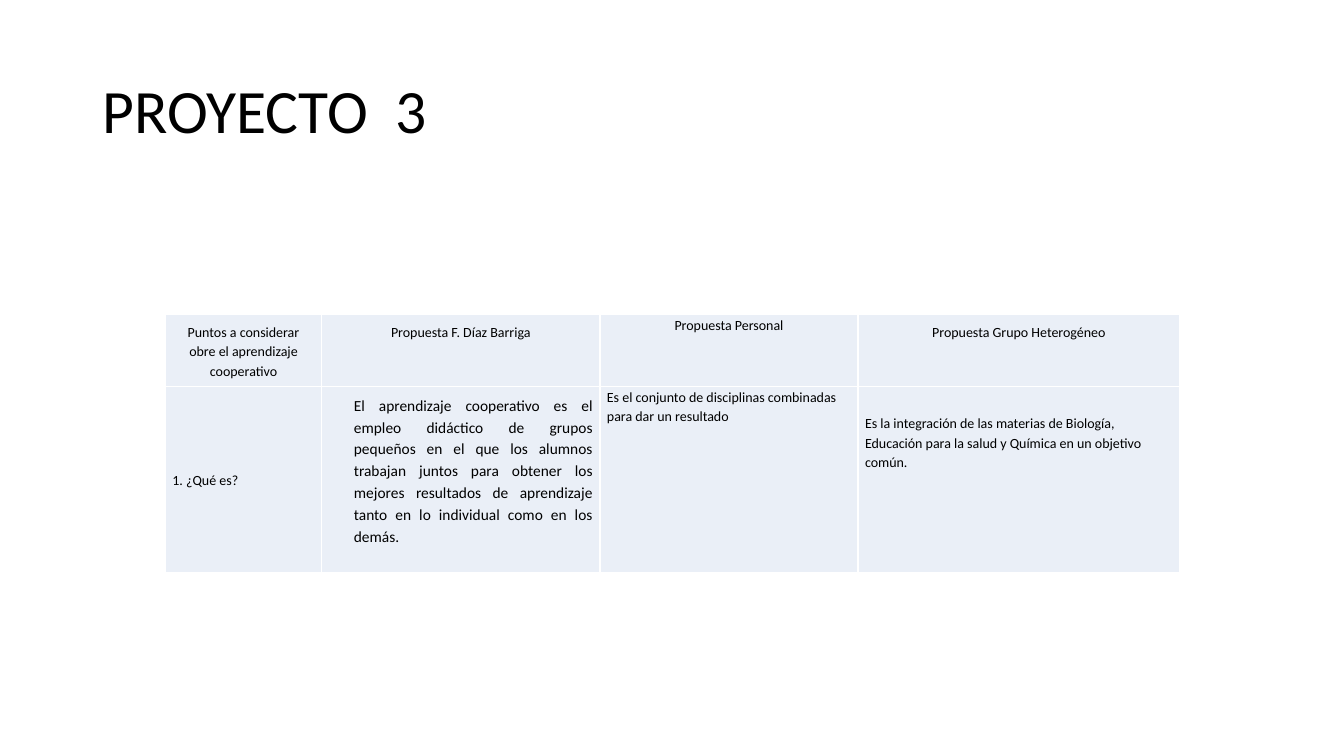
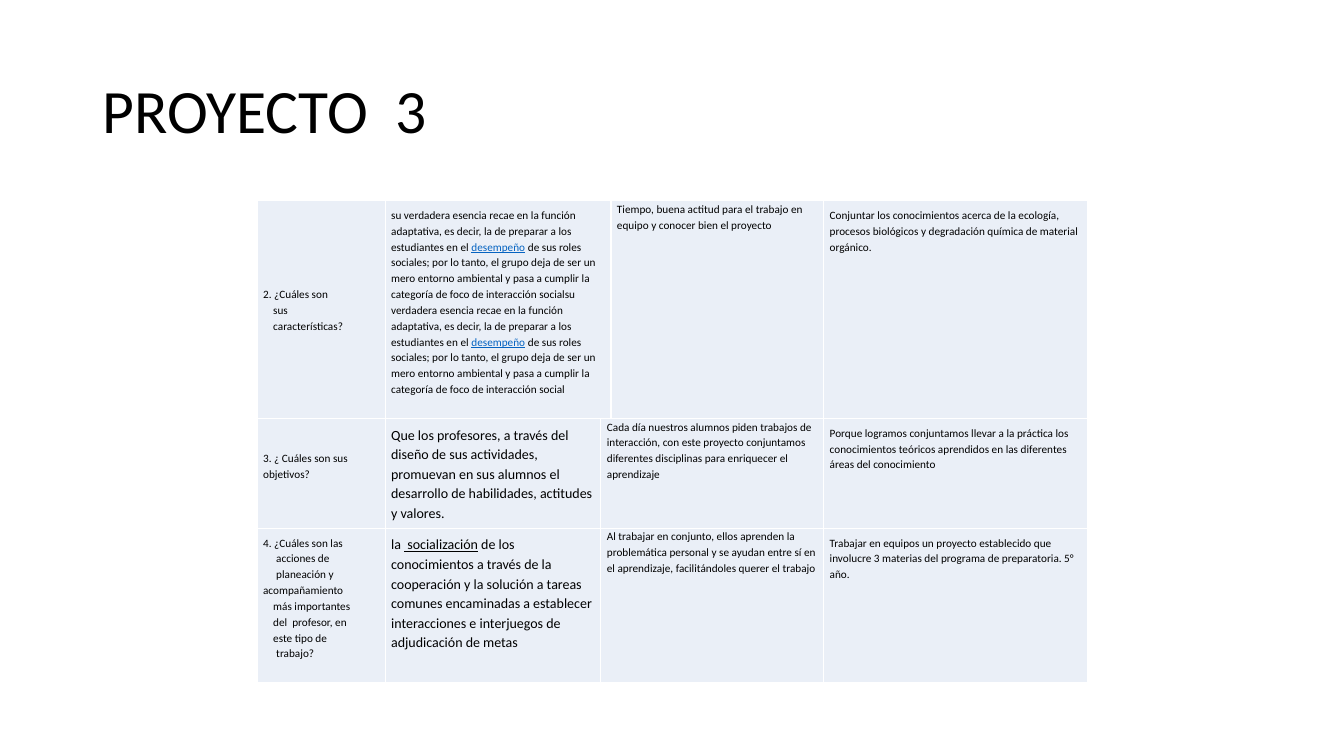
from dataclasses import dataclass
from itertools import zip_longest

from lxml import etree
from pptx import Presentation
from pptx import util as u
from pptx.dml.color import RGBColor
from pptx.enum import text
from pptx.oxml import ns

BLACK = RGBColor(0x00, 0x00, 0x00)
WHITE = RGBColor(0xFF, 0xFF, 0xFF)
LINK_BLUE = RGBColor(0x05, 0x63, 0xC1)
CELL_FILL = RGBColor(0xEA, 0xEF, 0xF7)
FONT = "Calibri"
TITLE = "PROYECTO  3"
CENTER = text.PP_ALIGN.CENTER
JUSTIFY = text.PP_ALIGN.JUSTIFY
MIDDLE = text.MSO_ANCHOR.MIDDLE


@dataclass
class Span:
    text: str
    color: RGBColor = BLACK
    underline: bool = False


@dataclass
class Entry:
    """Content of a cell; each paragraph is a string or a list of spans."""
    paras: list
    size: float
    align: text.PP_ALIGN = text.PP_ALIGN.LEFT
    anchor: text.MSO_ANCHOR = text.MSO_ANCHOR.TOP
    top: float = None
    bottom: float = None
    left_indent: float = 0
    first_indents: tuple = ()


LINK = Span("desempeño", LINK_BLUE, True)
ESSENCE = ("su verdadera esencia recae en la función adaptativa, es decir, la de "
           "preparar a los estudiantes en el ")
ROLES = (" de sus roles sociales; por lo tanto, el grupo deja de ser un mero entorno "
         "ambiental y pasa a cumplir la categoría de foco de interacción social")

DEFINITION_ROWS = [
    [
        Entry(["Puntos a considerar", "obre el aprendizaje cooperativo"], 10, CENTER, MIDDLE),
        Entry(["Propuesta F. Díaz Barriga"], 10, CENTER),
        Entry(["Propuesta Personal"], 10, CENTER, top=0),
        Entry(["Propuesta Grupo Heterogéneo"], 10, CENTER),
    ],
    [
        Entry(["1. ¿Qué es?"], 10, anchor=MIDDLE),
        Entry(["El aprendizaje cooperativo es el empleo didáctico de grupos pequeños en el "
               "que los alumnos trabajan juntos para obtener los mejores resultados de "
               "aprendizaje tanto en lo individual como en los demás."],
              11, JUSTIFY, left_indent=0.25),
        Entry(["Es el conjunto de disciplinas combinadas para dar un resultado"], 10, top=0),
        Entry(["Es la integración de las materias de Biología, Educación para la salud y "
               "Química en un objetivo común."], 10, top=0.26),
    ],
]

# None marks a grid cell covered by the merged cell on its left.
QUESTION_ROWS = [
    [
        Entry(["2. ¿Cuáles son", "sus", "características?"], 8, anchor=MIDDLE,
              first_indents=(0, 0.1, 0.1)),
        Entry([[Span(ESSENCE), LINK, Span(ROLES + ESSENCE), LINK, Span(ROLES)]], 8),
        None,
        Entry(["Tiempo, buena actitud para el trabajo en equipo y conocer bien el proyecto"],
              8, top=0),
        Entry(["Conjuntar los conocimientos acerca de la ecología, procesos biológicos y "
               "degradación química de material orgánico."], 8),
    ],
    [
        Entry(["3. ¿ Cuáles son sus objetivos?"], 8, anchor=MIDDLE, bottom=0.22),
        Entry(["Que los profesores, a través del diseño de sus actividades, promuevan en sus "
               "alumnos el desarrollo de habilidades, actitudes y valores."], 10),
        Entry(["Cada día nuestros alumnos piden trabajos de interacción, con este proyecto "
               "conjuntamos diferentes disciplinas para enriquecer el aprendizaje"], 8, top=0),
        None,
        Entry(["Porque logramos conjuntamos llevar a la práctica los conocimientos teóricos "
               "aprendidos en las diferentes áreas del conocimiento"], 8),
    ],
    [
        Entry(["4. ¿Cuáles son las", "acciones de", "planeación y acompañamiento",
               "más importantes", "del  profesor, en", "este tipo de", "trabajo?"],
              8, anchor=MIDDLE, bottom=0.22,
              first_indents=(0, 0.13, 0.13, 0.1, 0.1, 0.1, 0.13)),
        Entry([[Span("la "), Span(" socialización", underline=True),
                Span(" de los conocimientos a través de la cooperación y la solución a "
                     "tareas comunes encaminadas a establecer interacciones e interjuegos "
                     "de adjudicación de metas")]], 10),
        Entry(["Al trabajar en conjunto, ellos aprenden la problemática personal y se ayudan "
               "entre sí en el aprendizaje, facilitándoles querer el trabajo"], 8, top=0),
        None,
        Entry(["Trabajar en equipos un proyecto establecido que involucre 3 materias del "
               "programa de preparatoria. 5° año."], 8),
    ],
]


def add_run(para, span, size):
    run = para.add_run()
    run.text = span.text
    run.font.name = FONT
    run.font.size = u.Pt(size)
    run.font.color.rgb = span.color
    run.font.underline = span.underline


def add_title(slide):
    box = slide.shapes.add_textbox(u.Inches(0.92), u.Inches(0.4), u.Inches(11.5), u.Inches(1.45))
    frame = box.text_frame
    frame.word_wrap = True
    frame.vertical_anchor = MIDDLE
    para = frame.paragraphs[0]
    para.line_spacing = 0.9
    add_run(para, Span(TITLE), 44)


def style_cell(cell):
    """Give the cell white borders and the pale fill."""
    properties = cell._tc.get_or_add_tcPr()
    for side in ("a:lnL", "a:lnR", "a:lnT", "a:lnB"):
        line = etree.SubElement(properties, ns.qn(side), w=str(u.Pt(1)))
        fill = etree.SubElement(line, ns.qn("a:solidFill"))
        etree.SubElement(fill, ns.qn("a:srgbClr"), val=str(WHITE))
    cell.fill.solid()
    cell.fill.fore_color.rgb = CELL_FILL


def fill_cell(cell, entry, pad):
    cell.vertical_anchor = entry.anchor
    cell.margin_left = cell.margin_right = u.Inches(pad)
    cell.margin_top = u.Inches(pad if entry.top is None else entry.top)
    # Cells that start at the very top have no lower margin either.
    default_bottom = 0 if entry.top == 0 else pad
    cell.margin_bottom = u.Inches(default_bottom if entry.bottom is None else entry.bottom)
    frame = cell.text_frame
    for index, (content, first) in enumerate(
            zip_longest(entry.paras, entry.first_indents, fillvalue=0)):
        para = frame.add_paragraph() if index else frame.paragraphs[0]
        para.alignment = entry.align
        para.line_spacing = 1.15
        properties = para._p.get_or_add_pPr()
        properties.set("marL", str(u.Inches(entry.left_indent)))
        properties.set("indent", str(u.Inches(first)))
        spans = [Span(content)] if isinstance(content, str) else content
        for span in spans:
            add_run(para, span, entry.size)


def add_grid(slide, left, top, widths, heights, rows, pad):
    frame = slide.shapes.add_table(len(heights), len(widths), u.Inches(left), u.Inches(top),
                                   u.Inches(sum(widths)), u.Inches(sum(heights)))
    table = frame.table
    table.first_row = table.horz_banding = False
    for column, width in zip(table.columns, widths):
        column.width = u.Inches(width)
    for row, height in zip(table.rows, heights):
        row.height = u.Inches(height)
    for r, entries in enumerate(rows):
        for c, entry in enumerate(entries):
            cell = table.cell(r, c)
            style_cell(cell)
            if entry is None:
                table.cell(r, c - 1).merge(cell)
            else:
                fill_cell(cell, entry, pad)


def add_project_slide(deck, **grid):
    slide = deck.slides.add_slide(deck.slide_layouts[6])
    add_title(slide)
    add_grid(slide, **grid)


def main():
    deck = Presentation()
    deck.slide_width, deck.slide_height = u.Inches(13.33), u.Inches(7.5)
    add_project_slide(deck, left=1.64, top=3.12, widths=[1.55, 2.76, 2.56, 3.19],
                      heights=[0.71, 1.85], rows=DEFINITION_ROWS, pad=0.07)
    add_project_slide(deck, left=2.55, top=1.99, widths=[1.27, 2.14, 0.1, 2.11, 2.62],
                      heights=[2.16, 1.09, 1.53], rows=QUESTION_ROWS, pad=0.06)
    deck.save("out.pptx")


if __name__ == "__main__":
    main()
